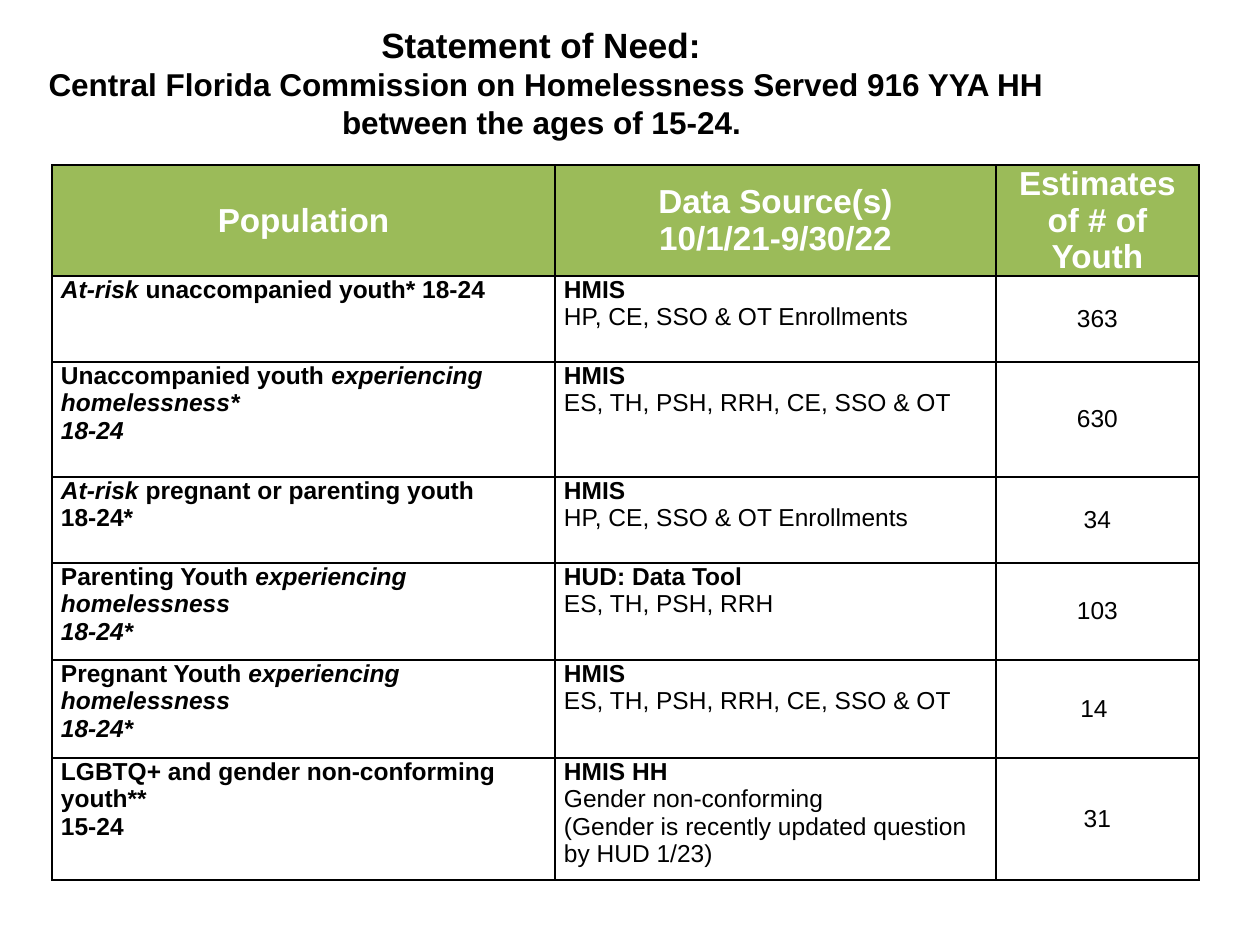
from lxml.etree import SubElement
from pptx import Presentation
from pptx.dml.color import RGBColor
from pptx.enum.text import MSO_ANCHOR, MSO_AUTO_SIZE, PP_ALIGN
from pptx.oxml.ns import qn
from pptx.util import Pt

PX = 914400 // 126
FONT = "Arial"
BLACK, WHITE, GREEN = "000000", "FFFFFF", "9BBB59"
COLUMN_WIDTHS = [503, 441, 203]
ROW_HEIGHTS = [111, 86, 115, 86, 97, 98, 122]

# A cell is a list of paragraphs; a paragraph is a list of (text, style) runs,
# where the style holds "b" for bold and "i" for italic.
HEADERS = [
    [[("Population", "b")]],
    [[("Data Source(s)", "b")], [("10/1/21-9/30/22", "b")]],
    [[("Estimates of # of Youth", "b")]],
]
HMIS = [("HMIS", "b")]
PREVENTION = [HMIS, [("HP, CE, SSO & OT Enrollments", "")]]
HOMELESS_SERVICES = [HMIS, [("ES, TH, PSH, RRH, CE, SSO & OT", "")]]
EXPERIENCING = ("experiencing homelessness", "bi")
POPULATIONS = [
    ([[("At-risk", "bi"), (" unaccompanied youth* 18-24", "b")]],
     PREVENTION, "363"),
    ([[("Unaccompanied youth ", "b"), ("experiencing homelessness*", "bi")],
      [("18-24", "bi")]],
     HOMELESS_SERVICES, "630"),
    ([[("At-risk", "bi"), (" pregnant or parenting youth", "b")],
      [("18-24*", "b")]],
     PREVENTION, "34"),
    ([[("Parenting Youth ", "b"), EXPERIENCING], [("18-24*", "bi")]],
     [[("HUD: Data Tool", "b")], [("ES, TH, PSH, RRH", "")]], "103"),
    ([[("Pregnant Youth ", "b"), EXPERIENCING], [("18-24*", "bi")]],
     HOMELESS_SERVICES, "14 "),
    ([[("LGBTQ+ and gender non-conforming youth**", "b")], [("15-24", "b")]],
     [[("HMIS HH", "b")], [("Gender non-conforming", "")],
      [("(Gender is recently updated question by HUD 1/23)", "")]], "31"),
]


def px(length):
    return length * PX


def rgb(color):
    return RGBColor.from_string(color)


def add_run(paragraph, text, size, color, style):
    run = paragraph.add_run()
    run.text = text
    font = run.font
    font.name, font.size = FONT, Pt(size)
    font.bold, font.italic = "b" in style, "i" in style
    font.color.rgb = rgb(color)


def write_paragraphs(frame, paragraphs, size, color, align):
    for index, runs in enumerate(paragraphs):
        paragraph = frame.add_paragraph() if index else frame.paragraphs[0]
        paragraph.alignment = align
        for text, style in runs:
            add_run(paragraph, text, size, color, style)


def add_borders(cell):
    properties = cell._tc.get_or_add_tcPr()
    for position, side in enumerate(("lnL", "lnR", "lnT", "lnB")):
        line = SubElement(properties, qn(f"a:{side}"), w=str(Pt(1)))
        fill = SubElement(line, qn("a:solidFill"))
        SubElement(fill, qn("a:srgbClr"), val=BLACK)
        properties.insert(position, line)


def fill_cell(cell, paragraphs, size, color, background, centered):
    cell.margin_left = cell.margin_right = px(9)
    cell.margin_top = cell.margin_bottom = 0
    cell.vertical_anchor = MSO_ANCHOR.MIDDLE if centered else MSO_ANCHOR.TOP
    cell.fill.solid()
    cell.fill.fore_color.rgb = rgb(background)
    add_borders(cell)
    align = PP_ALIGN.CENTER if centered else PP_ALIGN.LEFT
    write_paragraphs(cell.text_frame, paragraphs, size, color, align)


def place_title(slide, left, top, width, height):
    title = slide.shapes.title
    title.left, title.top = px(left), px(top)
    title.width, title.height = px(width), px(height)
    frame = title.text_frame
    frame.word_wrap = True
    frame.auto_size = MSO_AUTO_SIZE.NONE
    frame.vertical_anchor = MSO_ANCHOR.TOP
    frame.margin_left = frame.margin_right = px(12)
    frame.margin_top = frame.margin_bottom = px(12)
    write_paragraphs(frame, [[("Statement of Need: ", "b")]],
                     20, BLACK, PP_ALIGN.CENTER)
    subtitle = frame.add_paragraph()
    subtitle.alignment = PP_ALIGN.CENTER
    add_run(subtitle, "Central Florida Commission on Homelessness Served "
            "916 YYA HH between the ages of 15-24. ", 18, BLACK, "b")


def place_population_table(slide, left, top):
    table = slide.shapes.add_table(
        len(ROW_HEIGHTS), len(COLUMN_WIDTHS), px(left), px(top),
        px(sum(COLUMN_WIDTHS)), px(sum(ROW_HEIGHTS))).table
    table.horz_banding = False
    for column, width in zip(table.columns, COLUMN_WIDTHS):
        column.width = px(width)
    for row, height in zip(table.rows, ROW_HEIGHTS):
        row.height = px(height)

    for column, header in enumerate(HEADERS):
        fill_cell(table.cell(0, column), header, 19, WHITE, GREEN, True)
    for row, (population, source, estimate) in enumerate(POPULATIONS, 1):
        contents = [population, source, [[(estimate, "")]]]
        for column, paragraphs in enumerate(contents):
            fill_cell(table.cell(row, column), paragraphs, 14, BLACK, WHITE,
                      column == 2)


def main():
    deck = Presentation()
    deck.slide_width, deck.slide_height = px(1260), px(945)
    slide = deck.slides.add_slide(deck.slide_layouts[5])
    place_title(slide, 18, 11, 1056, 144)
    place_population_table(slide, 52, 165)
    deck.save("out.pptx")


if __name__ == "__main__":
    main()
